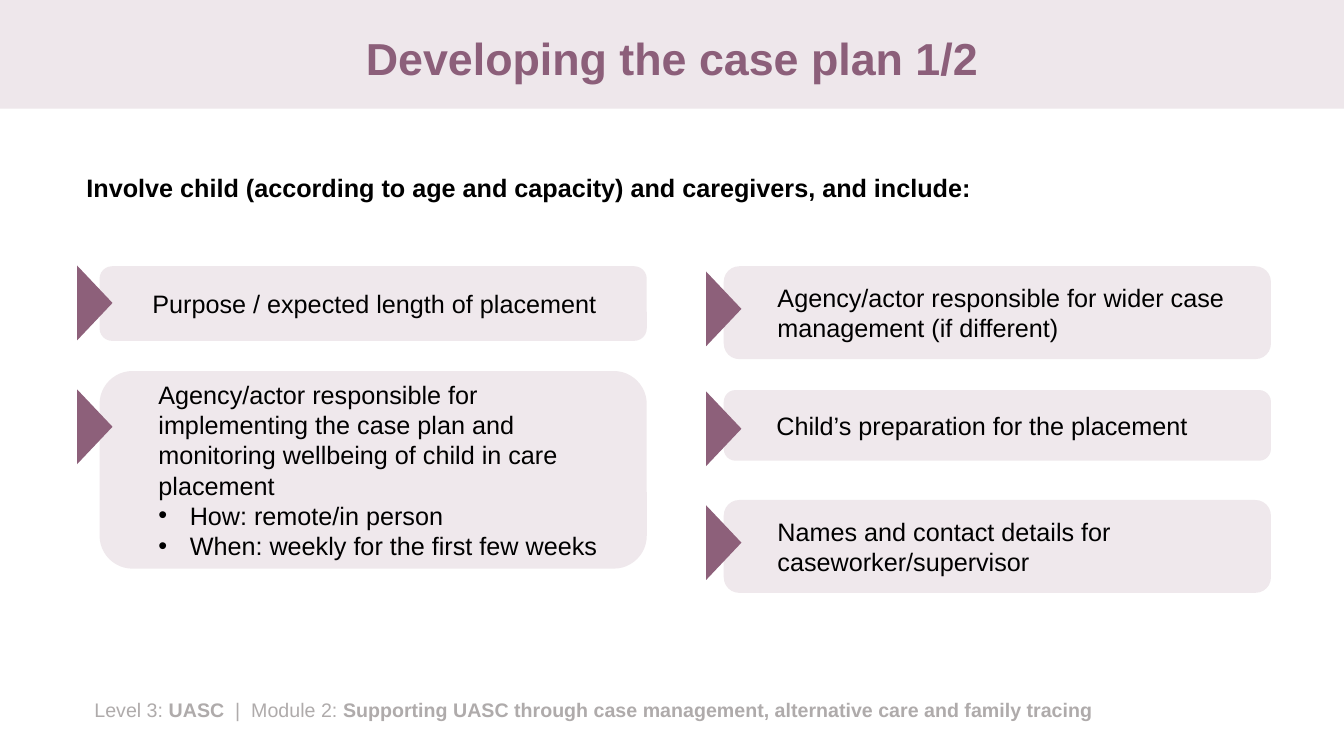
from lxml import etree
from pptx import Presentation
from pptx.dml.color import RGBColor
from pptx.enum.shapes import MSO_SHAPE
from pptx.enum.text import MSO_ANCHOR, PP_ALIGN
from pptx.oxml.ns import qn
from pptx.util import Cm, Pt

RECTANGLE = MSO_SHAPE.RECTANGLE
ROUNDED = MSO_SHAPE.ROUNDED_RECTANGLE
TRIANGLE = MSO_SHAPE.ISOSCELES_TRIANGLE
MIDDLE, TOP = MSO_ANCHOR.MIDDLE, MSO_ANCHOR.TOP
LEFT, CENTER = PP_ALIGN.LEFT, PP_ALIGN.CENTER

FONT = "Arial"
BLACK, GREY = "000000", "AFABAB"
BAND, PANEL = "EEE7EB", "EFE8EC"
TITLE, MARKER = "8C5F7A", "8D607A"

CARD_WIDTH = 13.79
MARKER_WIDTH, MARKER_HEIGHT = 1.88, 0.89
COLUMNS = [
    (2.51, 1.45, [
        (6.71, 1.88, 7.19, ["Purpose / expected length of placement"]),
        (9.35, 4.98, 10.31, [
            "Agency/actor responsible for implementing the case plan and "
            "monitoring wellbeing of child in care placement",
            "How: remote/in person",
            "When: weekly for the first few weeks",
        ]),
    ]),
    (18.24, 17.3, [
        (6.71, 2.34, 7.34,
         ["Agency/actor responsible for wider case management (if different)"]),
        (9.83, 1.78, 10.36, ["Child’s preparation for the placement"]),
        (12.6, 2.34, 13.23,
         ["Names and contact details for caseworker/supervisor"]),
    ]),
]
FOOTER = [
    ("Level 3: ", False),
    ("UASC", True),
    ("  |  Module 2: ", False),
    ("Supporting UASC through case management, alternative care "
     "and family tracing", True),
]


def color(value):
    return RGBColor.from_string(value)


def style_span(span, size, value, bold=False):
    span.font.name = FONT
    span.font.size = Pt(size)
    span.font.bold = bold
    span.font.color.rgb = color(value)


def add_block(slide, kind, left, top, width, height, fill):
    block = slide.shapes.add_shape(
        kind, Cm(left), Cm(top), Cm(width), Cm(height))
    block.shadow.inherit = False
    block.fill.solid()
    block.fill.fore_color.rgb = color(fill)
    block.line.fill.background()
    return block


def add_text(slide, left, top, width, height, spans, size, value,
             align=LEFT, anchor=TOP):
    box = slide.shapes.add_textbox(Cm(left), Cm(top), Cm(width), Cm(height))
    frame = box.text_frame
    frame.word_wrap = True
    frame.vertical_anchor = anchor
    para = frame.paragraphs[0]
    para.alignment = align
    for text, bold in spans:
        span = para.add_run()
        span.text = text
        style_span(span, size, value, bold)
    return para


def set_indent(para, margin, first_line=0):
    properties = para._p.get_or_add_pPr()
    properties.set("marL", str(Cm(margin)))
    properties.set("indent", str(Cm(first_line)))
    return properties


def add_bullet(para):
    properties = set_indent(para, 1.78, -0.79)
    etree.SubElement(properties, qn("a:buFont")).set("typeface", FONT)
    etree.SubElement(properties, qn("a:buChar")).set("char", "•")


def add_card(slide, left, top, height, lines):
    card = add_block(slide, ROUNDED, left, top, CARD_WIDTH, height, PANEL)
    frame = card.text_frame
    frame.word_wrap = True
    frame.vertical_anchor = MIDDLE
    frame.text = "\n".join(lines)
    for index, para in enumerate(frame.paragraphs):
        para.alignment = LEFT
        if index:
            add_bullet(para)
        else:
            set_indent(para, 0.99)
        style_span(para.runs[0], 18, BLACK)


def add_marker(slide, left, top):
    marker = add_block(
        slide, TRIANGLE, left, top, MARKER_WIDTH, MARKER_HEIGHT, MARKER)
    marker.rotation = 90


def main():
    deck = Presentation()
    deck.slide_width, deck.slide_height = Cm(33.87), Cm(19.05)
    page = deck.slides.add_slide(deck.slide_layouts[6])

    add_block(page, RECTANGLE, 0, 0, 33.87, 2.74, BAND)
    add_text(page, 2.13, 17.45, 28.83, 0.86, FOOTER, 14, GREY)
    title = add_text(page, 2.34, 0.33, 29.21, 2.41,
                     [("Developing the case plan 1/2", True)],
                     32, TITLE, CENTER, MIDDLE)
    title.line_spacing = 0.9
    add_text(page, 1.93, 4.22, 30, 1.02,
             [("Involve child (according to age and capacity) and caregivers, "
               "and include:", True)], 18, BLACK)

    for card_left, marker_left, cards in COLUMNS:
        for top, height, marker_top, lines in cards:
            add_card(page, card_left, top, height, lines)
            add_marker(page, marker_left, marker_top)

    deck.save("out.pptx")


if __name__ == "__main__":
    main()
